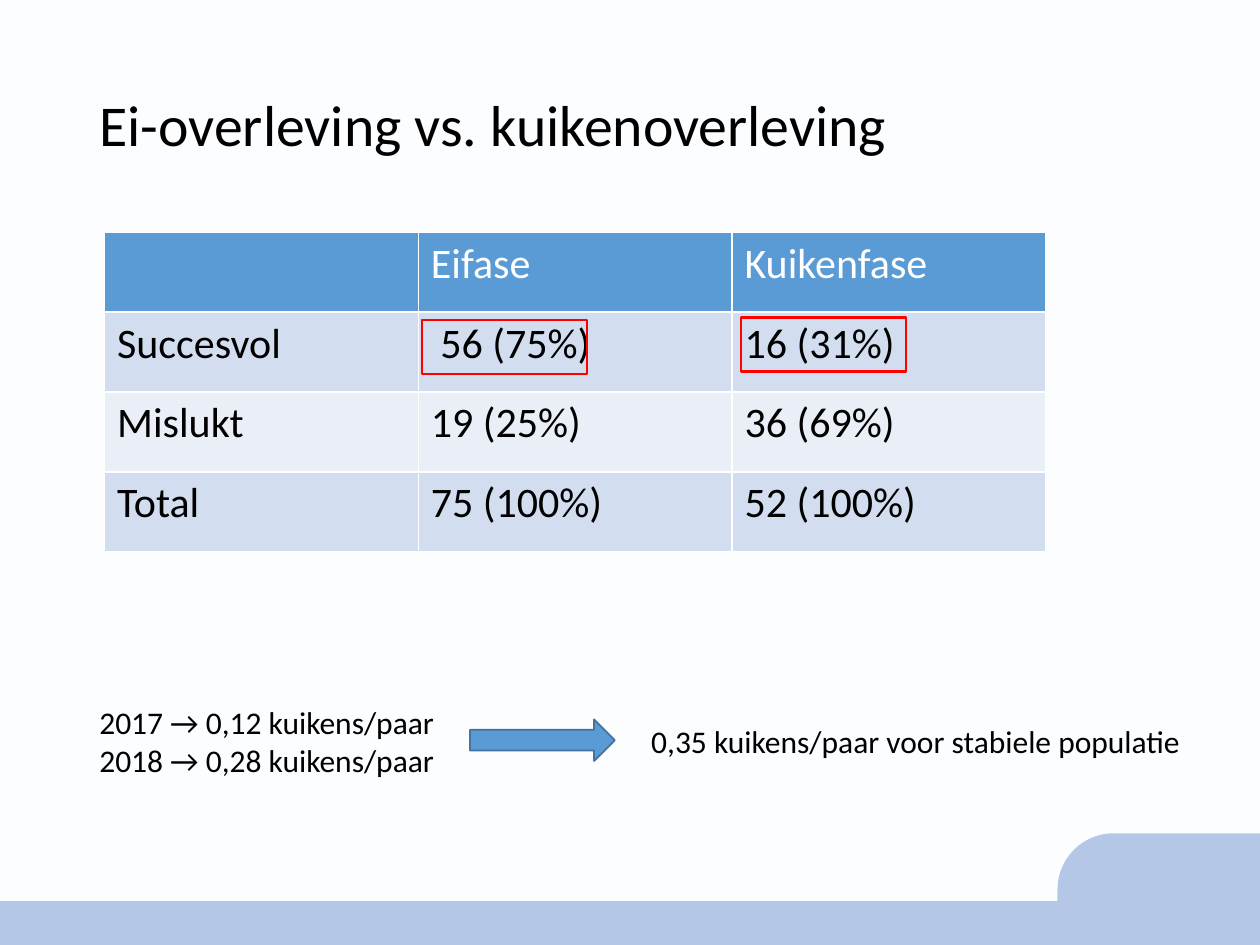
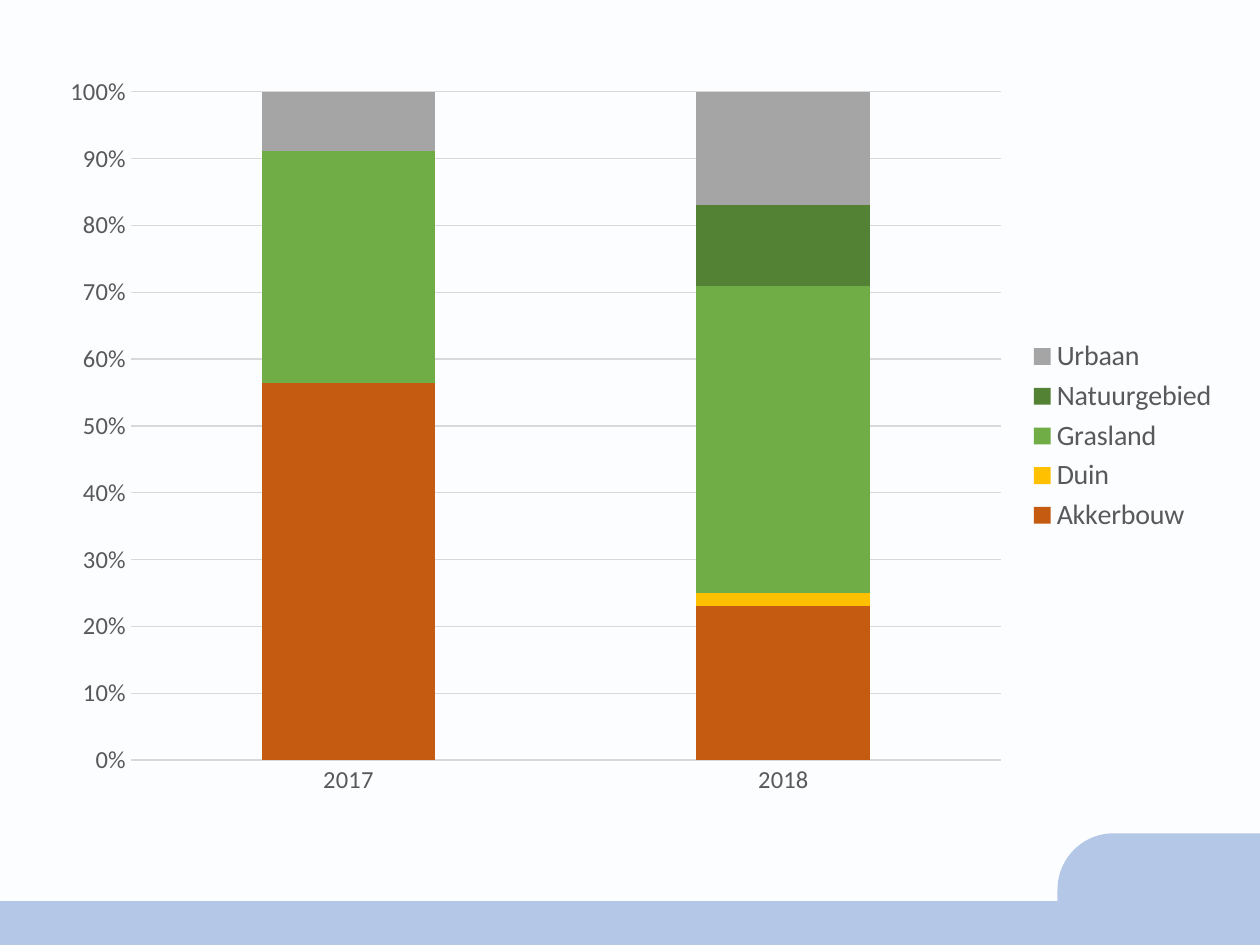
from typing import NamedTuple, Optional

from lxml import etree
from pptx import Presentation
from pptx import util as u
from pptx.chart.data import CategoryChartData
from pptx.dml.color import RGBColor
from pptx.enum import chart as ch, shapes as sh, text as tx
from pptx.oxml.ns import qn

FONT = "Calibri"
BLACK, WHITE, GREY, RULE = "000000", "FFFFFF", "595959", "D9D9D9"
PAPER, BAND, BLUE, EDGE, RED = "FBFDFF", "B4C7E7", "5B9BD5", "43739E", "FF0000"
STRIPES = ("D2DEEF", "EAEFF7")
UNIT = u.Inches(10) // 100  # the slide is a grid of 100 columns by 75 rows


class Box(NamedTuple):
    """Left, top, width and height in grid columns and rows."""
    col: float
    row: float
    wide: float
    high: float

    def emu(self) -> list[int]:
        return [round(side * UNIT) for side in self]


class Form(NamedTuple):
    box: Box
    kind: sh.MSO_SHAPE
    fill: Optional[str]
    line: str
    width: float = 1
    bends: tuple = ()


class Note(NamedTuple):
    box: Box
    lines: tuple


class Series(NamedTuple):
    name: str
    color: str
    values: tuple


BANDS = (
    Form(Box(0, 71.6, 100, 3.4), sh.MSO_SHAPE.RECTANGLE, BAND, BAND),
    Form(Box(84, 66.2, 16, 8.8), sh.MSO_SHAPE.SNIP_ROUND_RECTANGLE, BAND, BAND,
         bends=(0.5, 0)),
)
MARKS = (
    Form(Box(33.5, 25.4, 13.1, 4.3), sh.MSO_SHAPE.RECTANGLE, None, RED, 1.5),
    Form(Box(58.8, 25.2, 13.1, 4.3), sh.MSO_SHAPE.RECTANGLE, None, RED, 1.5),
    Form(Box(37.3, 57.1, 11.5, 3.3), sh.MSO_SHAPE.RIGHT_ARROW, BLUE, EDGE),
)
NOTES = (
    Note(Box(6.9, 55.3, 29.1, 7.1),
         ("2017 → 0,12 kuikens/paar", "2018 → 0,28 kuikens/paar")),
    Note(Box(50.7, 56.8, 44.5, 4), ("0,35 kuikens/paar voor stabiele populatie",)),
)
ROWS = (
    ("", "Eifase", "Kuikenfase"),
    ("Succesvol", " 56 (75%)", "16 (31%)"),
    ("Mislukt", "19 (25%)", "36 (69%)"),
    ("Total", "75 (100%)", "52 (100%)"),
)
YEARS = ("2017", "2018")
LAND = (
    Series("Akkerbouw", "C55A11", (57, 23)),
    Series("Duin", "FFC000", (0, 2)),
    Series("Grasland", "70AD47", (35, 46)),
    Series("Natuurgebied", "548235", (0, 12)),
    Series("Urbaan", "A5A5A5", (9, 17)),
)


def paint(fill, color: str) -> None:
    fill.solid()
    fill.fore_color.rgb = RGBColor.from_string(color)


def style(font, size: float, color: str) -> None:
    font.name, font.size, font.bold = FONT, u.Pt(size), False
    font.color.rgb = RGBColor.from_string(color)


def write(par, words: str, size: float, color: str = BLACK) -> None:
    run = par.add_run()
    run.text = words
    style(run.font, size, color)


def draw(slide, form: Form):
    shape = slide.shapes.add_shape(form.kind, *form.box.emu())
    shape.shadow.inherit = False
    for index, bend in enumerate(form.bends):
        shape.adjustments[index] = bend
    if form.fill:
        paint(shape.fill, form.fill)
    else:
        shape.fill.background()
    paint(shape.line.fill, form.line)
    shape.line.width = u.Pt(form.width)
    return shape


def dress(master, slide) -> None:
    """Give the master its background and bands, drawn by way of a slide."""
    paint(master.background.fill, PAPER)
    for spot, form in enumerate(BANDS, start=2):
        master.shapes.element.insert(spot, draw(slide, form).element)


def head(slide, words: str, box: Box) -> None:
    title = slide.shapes.title
    title.left, title.top, title.width, title.height = box.emu()
    frame = title.text_frame
    frame.auto_size = tx.MSO_AUTO_SIZE.NONE
    frame.vertical_anchor = tx.MSO_ANCHOR.MIDDLE
    par = frame.paragraphs[0]
    par.alignment, par.line_spacing = tx.PP_ALIGN.LEFT, 0.9
    write(par, words, 33)


def jot(slide, note: Note) -> None:
    frame = slide.shapes.add_textbox(*note.box.emu()).text_frame
    frame.word_wrap = False
    frame.auto_size = tx.MSO_AUTO_SIZE.SHAPE_TO_FIT_TEXT
    for index, words in enumerate(note.lines):
        par = frame.add_paragraph() if index else frame.paragraphs[0]
        write(par, words, 18)


def edge(cell, color: str) -> None:
    """Draw a one-point border on all four sides of a cell."""
    props = cell._tc.get_or_add_tcPr()
    for side in ("lnL", "lnR", "lnT", "lnB"):
        line = etree.SubElement(props, qn(f"a:{side}"), w=str(u.Pt(1)))
        fill = etree.SubElement(line, qn("a:solidFill"))
        etree.SubElement(fill, qn("a:srgbClr"), val=color)


def tabulate(slide, rows: tuple, box: Box) -> None:
    table = slide.shapes.add_table(len(rows), len(rows[0]), *box.emu()).table
    for r, row in enumerate(rows):
        back = STRIPES[(r - 1) % 2] if r else BLUE
        for c, words in enumerate(row):
            cell = table.cell(r, c)
            edge(cell, WHITE)
            paint(cell.fill, back)
            if words:
                write(cell.text_frame.paragraphs[0], words, 24, BLACK if r else WHITE)


def plot(slide, box: Box) -> None:
    data = CategoryChartData(number_format="0")
    data.categories = YEARS
    for item in LAND:
        data.add_series(item.name, item.values)
    chart = slide.shapes.add_chart(
        ch.XL_CHART_TYPE.COLUMN_STACKED_100, *box.emu(), data).chart
    style(chart.font, 10, BLACK)
    chart.has_title = False
    chart.has_legend = True
    chart.legend.position = ch.XL_LEGEND_POSITION.RIGHT
    chart.legend.include_in_layout = False
    style(chart.legend.font, 16, GREY)

    bars = chart.plots[0]
    bars.gap_width, bars.overlap, bars.vary_by_categories = 150, 100, False
    for series, item in zip(bars.series, LAND):
        paint(series.format.fill, item.color)
        series.invert_if_negative = False

    years, share = chart.category_axis, chart.value_axis
    for axis in (years, share):
        axis.major_tick_mark = axis.minor_tick_mark = ch.XL_TICK_MARK.NONE
        style(axis.tick_labels.font, 14, GREY)
    share.format.line.fill.background()
    share.tick_labels.number_format = "0%"
    share.tick_labels.number_format_is_linked = False
    share.has_major_gridlines = True
    for line in (years.format.line, share.major_gridlines.format.line):
        paint(line.fill, RULE)
        line.width = u.Pt(0.75)


def survival(slide) -> None:
    tabulate(slide, ROWS, Box(8.3, 18.4, 74.7, 25.4))
    head(slide, "Ei-overleving vs. kuikenoverleving", Box(6.9, 2.9, 86.2, 14.5))
    for note in NOTES:
        jot(slide, note)
    for mark in MARKS:
        draw(slide, mark)


def main() -> None:
    deck = Presentation()
    deck.slide_width, deck.slide_height = 100 * UNIT, 75 * UNIT
    layouts = deck.slide_layouts
    first = deck.slides.add_slide(layouts.get_by_name("Title Only"))
    dress(deck.slide_master, first)
    survival(first)
    plot(deck.slides.add_slide(layouts.get_by_name("Blank")), Box(3.7, 4.9, 94, 59.4))
    deck.save("out.pptx")


if __name__ == "__main__":
    main()
